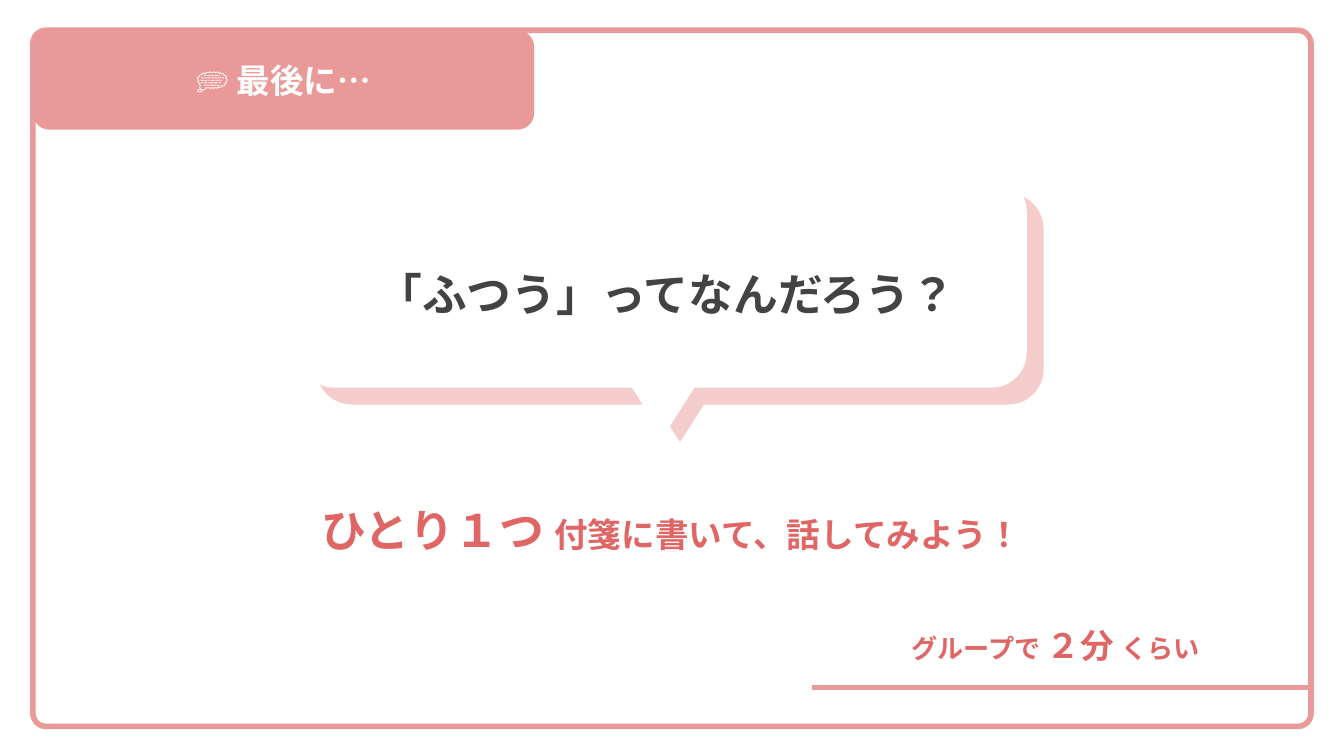
from dataclasses import dataclass

from lxml import etree
from pptx import Presentation
from pptx.dml.color import RGBColor
from pptx.enum.lang import MSO_LANGUAGE_ID
from pptx.enum.shapes import MSO_CONNECTOR, MSO_SHAPE
from pptx.enum.text import MSO_ANCHOR, MSO_AUTO_SIZE, PP_ALIGN
from pptx.oxml.ns import qn
from pptx.util import Pt

PX = 4572  # 200 px to the inch


@dataclass(frozen=True)
class Theme:
    font: str = "Noto Sans CJK JP"
    frame: str = "EA9999"
    shade: str = "F4CCCC"
    paper: str = "FFFFFF"
    accent: str = "E06666"
    ink: str = "434343"
    large: int = 24
    medium: int = 18
    small: int = 14
    stroke: int = 3


THEME = Theme()


def px(*lengths):
    return [n * PX for n in lengths]


def rgb(code):
    return RGBColor.from_string(code)


def add_block(shapes, kind, box, fill=None, line=None, radius=None):
    sp = shapes.add_shape(kind, *px(*box))
    sp.shadow.inherit = False
    if radius is not None:
        sp.adjustments[0] = radius
    if fill:
        sp.fill.solid()
        sp.fill.fore_color.rgb = rgb(fill)
    else:
        sp.fill.background()
    if line:
        sp.line.color.rgb = rgb(line)
        sp.line.width = Pt(THEME.stroke)
    else:
        sp.line.fill.background()
    return sp


def write(sp, runs, color, align=PP_ALIGN.LEFT, anchor=MSO_ANCHOR.TOP, spacing=1.0):
    """Fill a shape with one paragraph of (text, size) runs."""
    tf = sp.text_frame
    tf.word_wrap = True
    tf.auto_size = MSO_AUTO_SIZE.NONE
    tf.vertical_anchor = anchor
    tf.margin_left = tf.margin_right = tf.margin_top = tf.margin_bottom = 20 * PX
    p = tf.paragraphs[0]
    p.alignment = align
    p.line_spacing = spacing
    for text, size in runs:
        r = p.add_run()
        r.text = text
        r.font.name = THEME.font
        r.font.size = Pt(size)
        r.font.bold = True
        r.font.color.rgb = rgb(color)
        r.font.language_id = MSO_LANGUAGE_ID.JAPANESE
        # East Asian typeface follows the Latin one
        latin = r.font._element.find(qn("a:latin"))
        latin.addnext(etree.Element(qn("a:ea"), typeface=THEME.font))


def add_title_tab(slide, box):
    tab = add_block(slide.shapes, MSO_SHAPE.ROUNDED_RECTANGLE, box,
                    fill=THEME.frame, radius=0.167)
    title = slide.shapes.title
    title.left, title.top, title.width, title.height = px(*box)
    write(title, [("💭 最後に…", THEME.medium)], THEME.paper,
          PP_ALIGN.CENTER, MSO_ANCHOR.MIDDLE)
    tab._element.addnext(title._element)  # title sits on its tab


def add_instruction(slide, box):
    sp = slide.shapes.add_textbox(*px(*box))
    write(sp, [("ひとり１つ ", THEME.large),
               ("付箋に書いて、話してみよう！", THEME.medium)],
          THEME.accent, PP_ALIGN.CENTER)


def add_time_note(slide, box):
    x, y, w, h = box
    shapes = slide.shapes.add_group_shape().shapes
    sp = shapes.add_textbox(*px(x + 128, y, 478, 88))
    write(sp, [("グループで ", THEME.small), ("２分 ", THEME.medium),
               ("くらい", THEME.small)], THEME.accent)
    # Rule under the note
    rule = shapes.add_connector(MSO_CONNECTOR.STRAIGHT, *px(x, y + h, x + w, y + h))
    rule.line.color.rgb = rgb(THEME.frame)
    rule.line.width = Pt(THEME.stroke)
    etree.SubElement(rule._element.spPr, qn("a:effectLst"))


def add_bubble(slide, box):
    x, y, w, h = box
    shapes = slide.shapes.add_group_shape().shapes
    # Shade first, then the paper bubble: each a body with a tail
    for dx, dy, tail_y, fill in ((25, 25, 307, THEME.shade),
                                 (0, 0, 299, THEME.paper)):
        add_block(shapes, MSO_SHAPE.ROUNDED_RECTANGLE, (x + dx, y + dy, w, h),
                  fill=fill, radius=0.167)
        add_block(shapes, MSO_SHAPE.FLOWCHART_MERGE,
                  (x + 485 + dx, y + tail_y, 112, 88), fill=fill)
    # Question
    sp = shapes.add_textbox(*px(x + 96, y + 74, 914, 162))
    write(sp, [("「ふつう」ってなんだろう？", THEME.large)], THEME.ink, spacing=1.5)


def main():
    prs = Presentation()
    prs.slide_width, prs.slide_height = px(2000, 1125)
    slide = prs.slides.add_slide(prs.slide_layouts[5])
    slide.background.fill.solid()
    slide.background.fill.fore_color.rgb = rgb(THEME.paper)

    # Frame around the slide
    add_block(slide.shapes, MSO_SHAPE.ROUNDED_RECTANGLE, (49, 45, 1902, 1036),
              line=THEME.frame, radius=0.019)
    add_instruction(slide, (246, 728, 1506, 132))
    add_time_note(slide, (1208, 910, 742, 113))
    add_title_tab(slide, (49, 45, 746, 148))
    add_bubble(slide, (446, 263, 1082, 314))
    prs.save("out.pptx")


if __name__ == "__main__":
    main()
